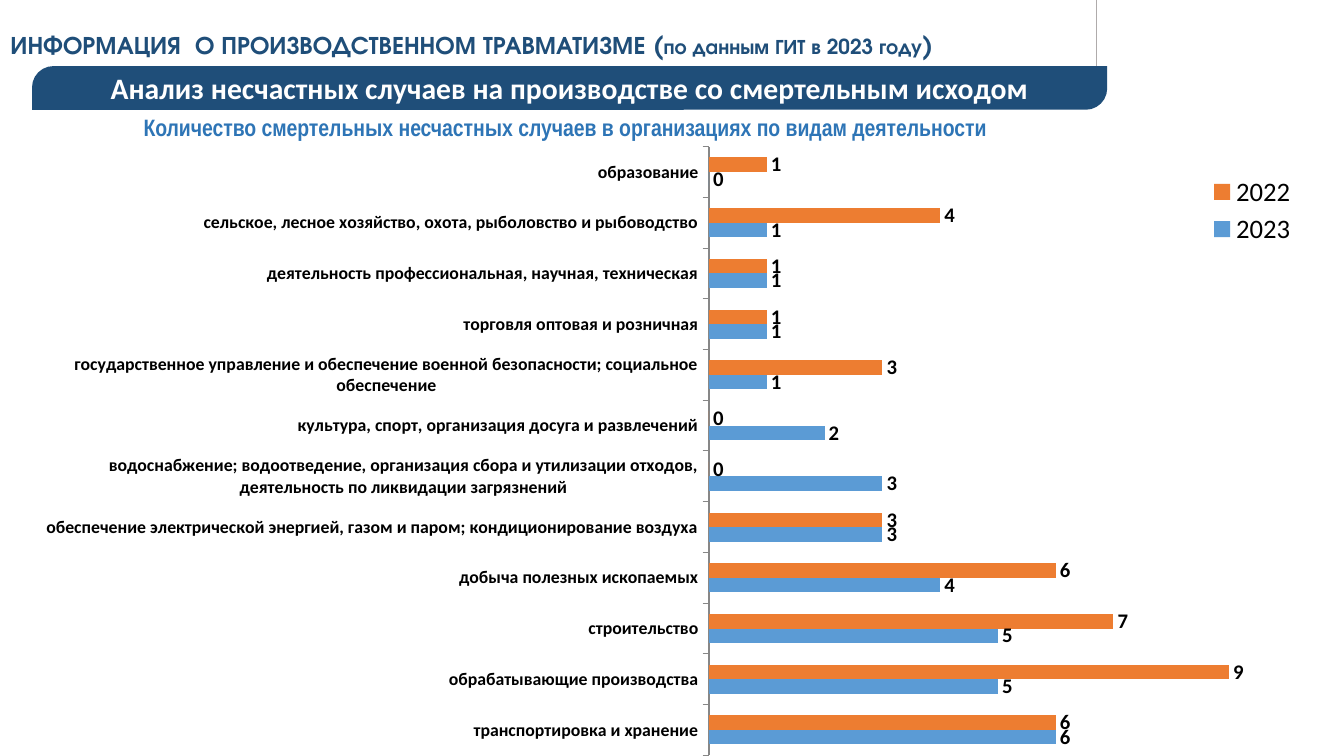
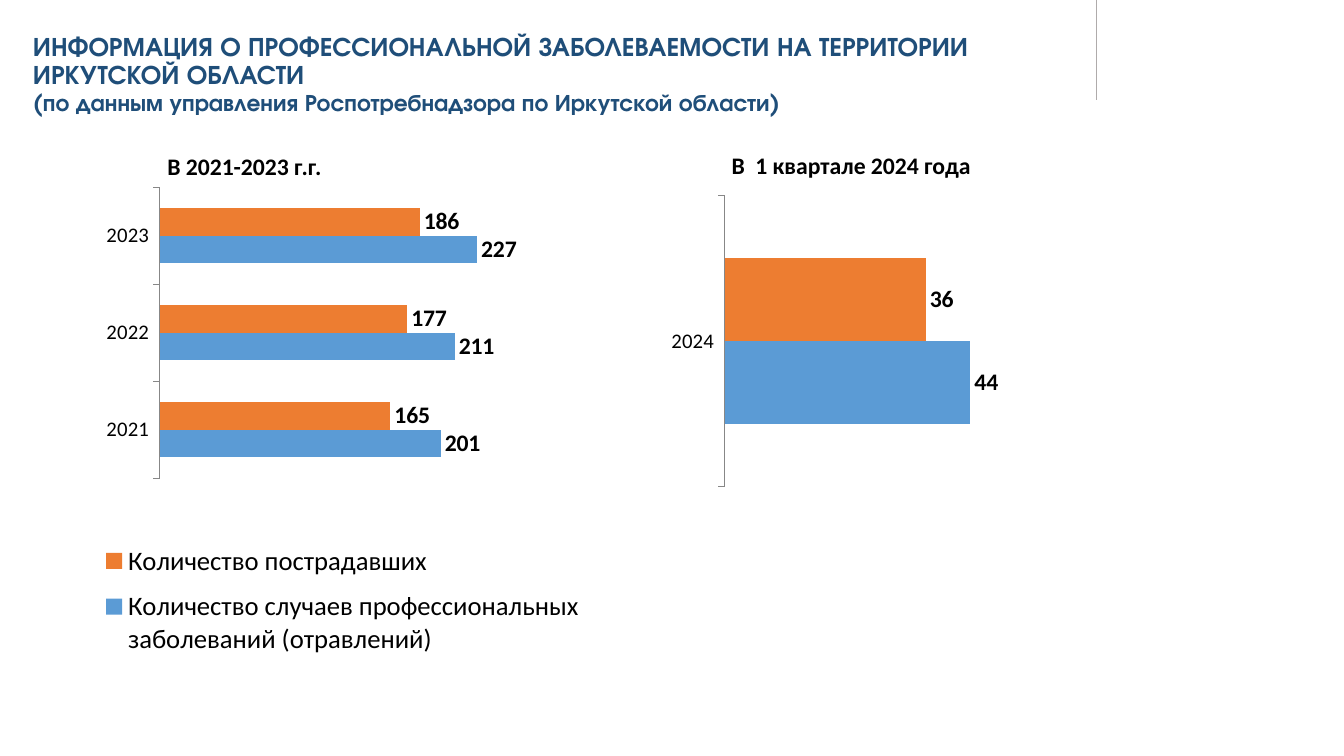
from dataclasses import dataclass

from pptx import Presentation
from pptx.chart.data import CategoryChartData
from pptx.dml.color import RGBColor
from pptx.enum.chart import XL_CHART_TYPE, XL_LABEL_POSITION, XL_LEGEND_POSITION, XL_TICK_MARK
from pptx.enum.shapes import MSO_CONNECTOR, MSO_SHAPE
from pptx.enum.text import MSO_ANCHOR, PP_ALIGN
from pptx.oxml import parse_xml
from pptx.oxml.ns import nsdecls, qn
from pptx.util import Inches, Pt


@dataclass(frozen=True)
class Theme:
    navy: str = "1F4E79"
    blue: str = "2E75B6"
    rule: str = "AFABAB"
    axis: str = "878787"
    white: str = "FFFFFF"
    black: str = "000000"
    series: tuple = ("5B9BD5", "ED7D31")
    title_font: str = "TeX Gyre Adventor"
    body_font: str = "Calibri"
    narrow_font: str = "Arial Narrow"
    band_size: int = 20
    legend_size: int = 18
    text_size: int = 16


T = Theme()
W, H = Inches(12.6), Inches(7.09)
PLOT_SMALL = (0.171, 0.02, 0.61, 0.575)


def share(x, y, w, h):
    """Percentages of the slide's width and height as lengths."""
    return [round(part * side / 100) for part, side in zip((x, y, w, h), (W, H, W, H))]


def style(font, size, color=T.black, name=T.body_font, bold=True):
    font.size, font.name, font.bold = Pt(size), name, bold
    font.color.rgb = RGBColor.from_string(color)


# Text
def add_text(s, box, text, size=T.text_size, color=T.black, name=T.body_font,
             align=PP_ALIGN.LEFT, tight=False):
    tf = s.shapes.add_textbox(*share(*box)).text_frame
    tf.word_wrap = True
    if tight:
        tf.margin_left = tf.margin_right = tf.margin_bottom = 0
        tf.margin_top = Inches(0.01)
    p = tf.paragraphs[0]
    p.text = text
    p.alignment = align
    style(p.runs[0].font, size, color, name)


def add_title(s, box, lines):
    """Each line is a list of (text, size) runs."""
    tf = s.shapes.add_textbox(*share(*box)).text_frame
    tf.word_wrap = True
    for i, line in enumerate(lines):
        p = tf.add_paragraph() if i else tf.paragraphs[0]
        p.line_spacing = 0.9
        for text, size in line:
            r = p.add_run()
            r.text = text
            style(r.font, size, T.navy, T.title_font)


def add_band(s, box, text):
    sp = s.shapes.add_shape(MSO_SHAPE.ROUND_2_DIAG_RECTANGLE, *share(*box))
    sp.adjustments[0], sp.adjustments[1] = 0.489, 0
    sp.shadow.inherit = False
    sp.fill.solid()
    sp.fill.fore_color.rgb = RGBColor.from_string(T.navy)
    sp.line.fill.background()
    tf = sp.text_frame
    tf.margin_left = tf.margin_top = tf.margin_right = tf.margin_bottom = 0
    tf.vertical_anchor = MSO_ANCHOR.MIDDLE
    p = tf.paragraphs[0]
    p.text = text
    p.alignment = PP_ALIGN.CENTER
    style(p.runs[0].font, T.band_size, T.white)


# Charts
def set_layout(parent, index, box, inner=False):
    """Fix the place of a plot or legend, in shares of the chart."""
    for old in parent.findall(qn("c:layout")):
        parent.remove(old)
    target = '<c:layoutTarget val="inner"/>' if inner else ""
    modes = "".join(f'<c:{k}Mode val="edge"/>' for k in "xy")
    sizes = "".join(f'<c:{k} val="{v}"/>' for k, v in zip("xywh", box))
    parent.insert(index, parse_xml(
        f'<c:layout {nsdecls("c")}><c:manualLayout>{target}{modes}{sizes}'
        '</c:manualLayout></c:layout>'))


def add_bars(s, box, cats, series, top, plot_box, cat_size, label_size,
             cat_bold=False, legend_box=None):
    data = CategoryChartData()
    data.categories = cats
    for name, values in series:
        data.add_series(name, values)
    chart = s.shapes.add_chart(XL_CHART_TYPE.BAR_CLUSTERED, *share(*box), data).chart
    style(chart.font, T.legend_size, bold=False)
    chart.has_title = False

    plot = chart.plots[0]
    plot.gap_width, plot.overlap, plot.vary_by_categories = 150, 0, False
    for ser, color in zip(plot.series, T.series):
        ser.format.fill.solid()
        ser.format.fill.fore_color.rgb = RGBColor.from_string(color)
        ser.invert_if_negative = False
    plot.has_data_labels = True
    labels = plot.data_labels
    labels.show_value = True
    labels.position = XL_LABEL_POSITION.OUTSIDE_END
    style(labels.font, label_size)

    axis = chart.category_axis
    axis.major_tick_mark = XL_TICK_MARK.OUTSIDE
    axis.format.line.color.rgb = RGBColor.from_string(T.axis)
    axis.format.line.width = Pt(0.75)
    style(axis.tick_labels.font, cat_size, bold=cat_bold)
    scale = chart.value_axis
    scale.visible = scale.has_major_gridlines = False
    scale.minimum_scale, scale.maximum_scale = 0, top

    set_layout(chart._chartSpace.chart.plotArea, 0, plot_box, inner=True)
    chart.has_legend = legend_box is not None
    if legend_box:
        chart.legend.position = XL_LEGEND_POSITION.RIGHT
        chart.legend.include_in_layout = False
        style(chart.legend.font, T.legend_size, bold=False)
        set_layout(chart.legend._element, 1, legend_box)


# Slides
def new_slide(prs):
    """Blank slide with the shared vertical rule at the top right."""
    s = prs.slides.add_slide(prs.slide_layouts[6])
    x, y, _, length = share(81.59, 0, 0, 13.26)
    rule = s.shapes.add_connector(MSO_CONNECTOR.STRAIGHT, x, y, x, length)
    rule.line.color.rgb = RGBColor.from_string(T.rule)
    rule.line.width = Pt(0.75)
    rule._element.spPr.append(parse_xml(f'<a:effectLst {nsdecls("a")}/>'))
    return s


def fatal_accidents(prs):
    s = new_slide(prs)
    add_title(s, (0, 3.67, 80.63, 13.68), [[
        ("ИНФОРМАЦИЯ  О ПРОИЗВОДСТВЕННОМ ТРАВМАТИЗМЕ (", 17),
        ("по данным ГИТ в 2023 году", 14), (")", 17)]])
    add_band(s, (2.38, 8.74, 80, 5.78),
             "Анализ несчастных случаев на производстве со смертельным исходом")
    add_text(s, (3.02, 14.81, 78.1, 3.95),
             "Количество смертельных несчастных случаев в организациях по видам деятельности",
             color=T.blue, name=T.narrow_font, align=PP_ALIGN.CENTER, tight=True)
    # Activity, 2023, 2022
    rows = [
        ("транспортировка и хранение", 6, 6),
        ("обрабатывающие производства", 5, 9),
        ("строительство", 5, 7),
        ("добыча полезных ископаемых", 4, 6),
        ("обеспечение электрической энергией, газом и паром; кондиционирование воздуха", 3, 3),
        ("водоснабжение; водоотведение, организация сбора и утилизации отходов, "
         "деятельность по ликвидации загрязнений", 3, 0),
        ("культура, спорт, организация досуга и развлечений", 2, 0),
        ("государственное управление и обеспечение военной безопасности; "
         "социальное обеспечение", 1, 3),
        ("торговля оптовая и розничная", 1, 1),
        ("деятельность профессиональная, научная, техническая", 1, 1),
        ("сельское, лесное хозяйство, охота, рыболовство и рыбоводство", 1, 4),
        ("образование", 0, 1),
    ]
    cats, now, before = zip(*rows)
    add_bars(s, (2.62, 19.32, 95.32, 80.68), cats, [("2023", now), ("2022", before)],
             top=10, plot_box=(0.526, 0, 0.451, 1), cat_size=12, label_size=14,
             cat_bold=True, legend_box=(0.91, 0.04, 0.08, 0.13))


def occupational_disease(prs):
    s = new_slide(prs)
    add_title(s, (1.67, 3.67, 79.68, 11.28), [
        [("ИНФОРМАЦИЯ О ПРОФЕССИОНАЛЬНОЙ ЗАБОЛЕВАЕМОСТИ НА ТЕРРИТОРИИ ИРКУТСКОЙ ОБЛАСТИ", 18)],
        [("(по данным управления Роспотребнадзора по Иркутской области)", 16)]])
    names = ("Количество случаев профессиональных заболеваний (отравлений)",
             "Количество пострадавших")
    # Caption, its place, chart place, years, cases and people, axis top, legend
    panels = [
        ("В 2021-2023 г.г.", (11.67, 19.46, 18.81, 5.22), (4.6, 23.41, 42.62, 67),
         ("2021", "2022", "2023"), ((201, 211, 227), (165, 177, 186)), 250,
         (0.06, 0.7, 0.86, 0.27)),
        ("В  1 квартале 2024 года", (53.65, 19.32, 20, 5.22), (48.1, 24.54, 34.05, 67),
         ("2024",), ((44,), (36,)), 50, None),
    ]
    for caption, caption_box, box, years, values, top, legend_box in panels:
        add_bars(s, box, years, zip(names, values), top, PLOT_SMALL,
                 cat_size=14, label_size=16, legend_box=legend_box)
        add_text(s, caption_box, caption)


def main():
    prs = Presentation()
    prs.slide_width, prs.slide_height = W, H
    fatal_accidents(prs)
    occupational_disease(prs)
    prs.save("out.pptx")


if __name__ == "__main__":
    main()
